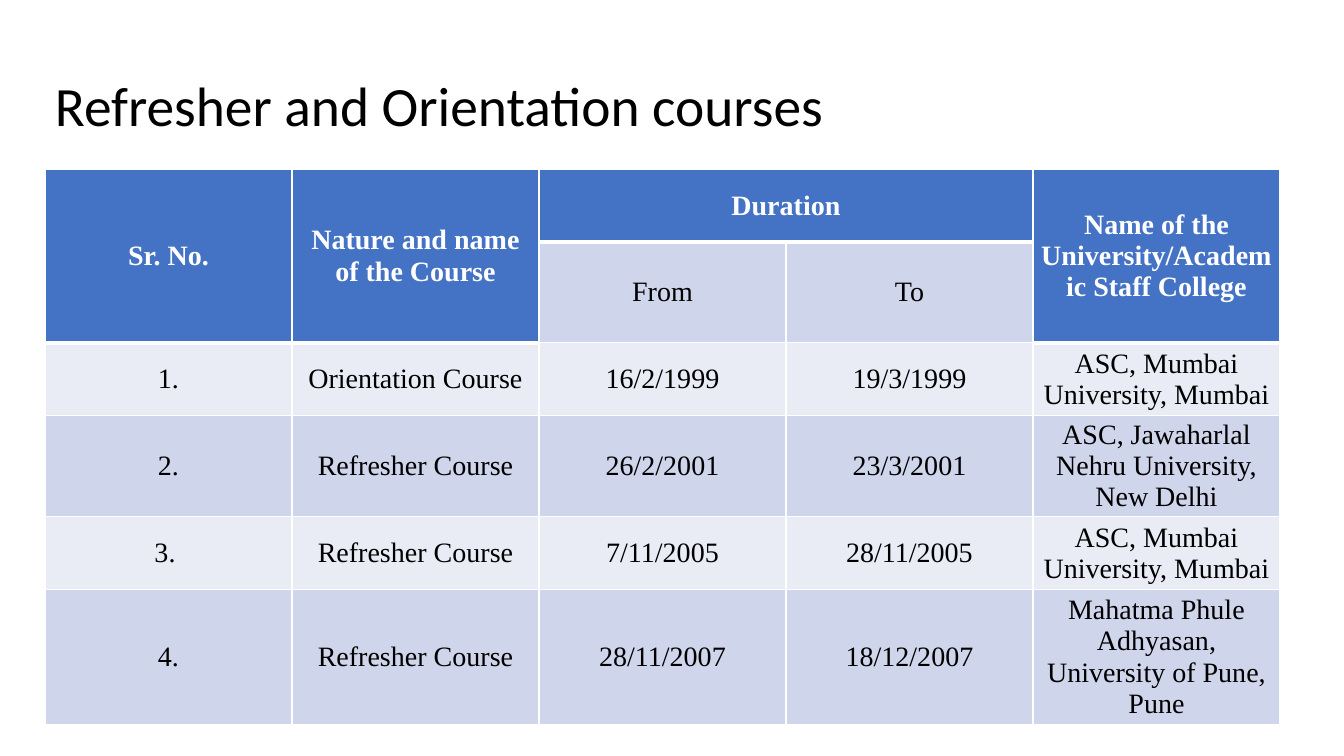
from dataclasses import dataclass

from lxml.etree import SubElement
from pptx import Presentation
from pptx.dml.color import RGBColor
from pptx.enum.text import MSO_ANCHOR as Anchor, PP_ALIGN as Align
from pptx.oxml.ns import qn
from pptx.util import Pt

EMU_PER_PX = 914400 / 100.8


def px(length):
    return round(length * EMU_PER_PX)


@dataclass(frozen=True)
class Theme:
    ink: str = "000000"
    white: str = "FFFFFF"
    header: str = "4472C4"
    bands: tuple = ("E9EBF5", "CFD5EA")
    title_font: str = "Calibri"
    table_font: str = "Times New Roman"
    title_size: float = 39.6
    table_size: float = 20
    rule: int = 1
    header_rule: int = 3


class SlideBuilder:
    def __init__(self, slide, theme):
        self.slide = slide
        self.theme = theme

    def add_span(self, para, text, font, size, color, bold=False):
        span = para.add_run()
        span.text = text
        span.font.name = font
        span.font.size = Pt(size)
        span.font.bold = bold
        span.font.color.rgb = RGBColor.from_string(color)

    def add_title(self, text, left, top, width, height):
        box = self.slide.shapes.add_textbox(px(left), px(top), px(width), px(height))
        frame = box.text_frame
        frame.word_wrap = True
        frame.vertical_anchor = Anchor.MIDDLE
        frame.margin_left = frame.margin_right = px(10)
        frame.margin_top = frame.margin_bottom = px(10)
        para = frame.paragraphs[0]
        para.line_spacing = 0.9
        theme = self.theme
        self.add_span(para, text, theme.title_font, theme.title_size, theme.ink)

    def add_table(self, rows, merges, header_cells, left, top, column_width, row_heights):
        column_count = len(rows[0])
        table = self.slide.shapes.add_table(
            len(rows), column_count, px(left), px(top),
            px(column_width * column_count), px(sum(row_heights))).table
        table.first_row = table.horz_banding = False
        for column in table.columns:
            column.width = px(column_width)
        for row, height in zip(table.rows, row_heights):
            row.height = px(height)
        for first, last in merges:
            table.cell(*first).merge(table.cell(*last))
        for r, row in enumerate(rows):
            for c, text in enumerate(row):
                self.style_cell(table.cell(r, c), text, r, (r, c) in header_cells,
                                (r - 1, c) in header_cells)

    def style_cell(self, cell, text, row, is_header, below_header):
        theme = self.theme
        self.add_borders(cell, below_header, is_header)
        cell.fill.solid()
        cell.fill.fore_color.rgb = RGBColor.from_string(
            theme.header if is_header else theme.bands[row % 2])
        cell.vertical_anchor = Anchor.MIDDLE
        cell.margin_left = cell.margin_right = px(7)
        cell.margin_top = cell.margin_bottom = 0
        para = cell.text_frame.paragraphs[0]
        para.alignment = Align.CENTER
        if text:
            self.add_span(para, text, theme.table_font, theme.table_size,
                          theme.white if is_header else theme.ink, is_header)

    def add_borders(self, cell, heavy_top, heavy_bottom):
        theme = self.theme
        properties = cell._tc.get_or_add_tcPr()
        for side, heavy in (("L", False), ("R", False), ("T", heavy_top), ("B", heavy_bottom)):
            width = theme.header_rule if heavy else theme.rule
            line = SubElement(properties, qn(f"a:ln{side}"), w=str(Pt(width)))
            fill = SubElement(line, qn("a:solidFill"))
            SubElement(fill, qn("a:srgbClr"), val=theme.white)


COURSES = [
    ["Sr. No.", "Nature and name of the Course", "Duration", "",
     "Name of the University/Academic Staff College"],
    ["", "", "From", "To", ""],
    ["1.", "Orientation Course", "16/2/1999", "19/3/1999", "ASC, Mumbai University, Mumbai"],
    ["2.", "Refresher Course", "26/2/2001", "23/3/2001",
     "ASC, Jawaharlal Nehru University, New Delhi"],
    ["3. ", "Refresher Course", "7/11/2005", "28/11/2005", "ASC, Mumbai University, Mumbai"],
    ["4.", "Refresher Course", "28/11/2007", "18/12/2007",
     "Mahatma Phule Adhyasan, University of Pune, Pune"],
]
TALL_HEADERS = (0, 1, 4)
MERGES = [((0, c), (1, c)) for c in TALL_HEADERS] + [((0, 2), (0, 3))]
HEADER_CELLS = {(0, c) for c in range(5)} | {(1, c) for c in TALL_HEADERS}


def main():
    deck = Presentation()
    deck.slide_width, deck.slide_height = px(1344), px(756)
    builder = SlideBuilder(deck.slides.add_slide(deck.slide_layouts[6]), Theme())
    builder.add_title("Refresher and Orientation courses", 45, 66, 1252, 85)
    builder.add_table(COURSES, MERGES, HEADER_CELLS, left=45, top=169,
                      column_width=247, row_heights=[73] * 5 + [108])
    deck.save("out.pptx")


if __name__ == "__main__":
    main()
